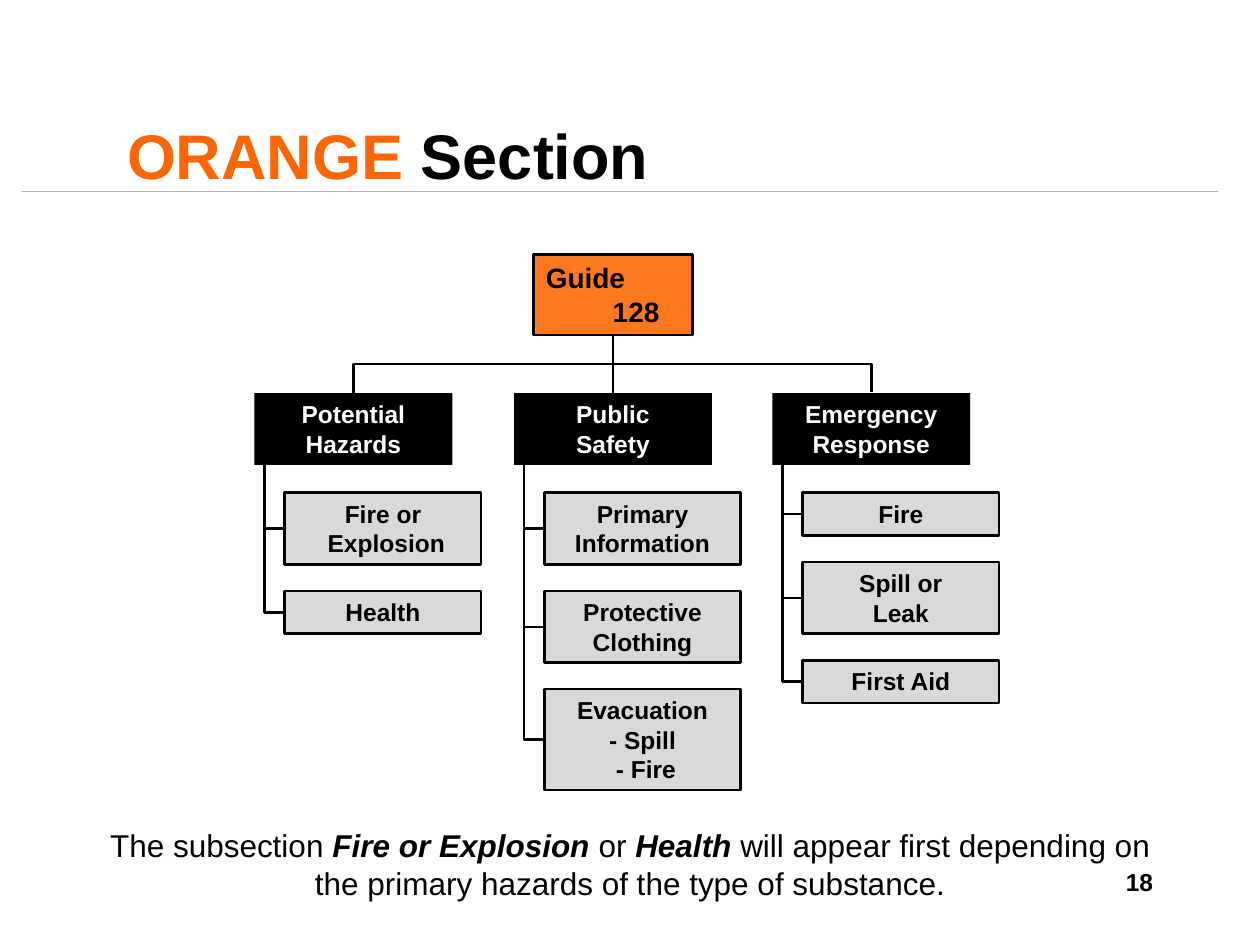
from lxml import etree
from pptx import Presentation
from pptx.dml.color import RGBColor
from pptx.enum.shapes import MSO_CONNECTOR, MSO_SHAPE
from pptx.enum.text import MSO_ANCHOR, PP_ALIGN
from pptx.oxml.ns import qn
from pptx.util import Inches, Pt

RECT = MSO_SHAPE.RECTANGLE
STRAIGHT, ELBOW = MSO_CONNECTOR.STRAIGHT, MSO_CONNECTOR.ELBOW
LEFT, CENTER, RIGHT = PP_ALIGN.LEFT, PP_ALIGN.CENTER, PP_ALIGN.RIGHT
TOP, MIDDLE = MSO_ANCHOR.TOP, MSO_ANCHOR.MIDDLE
TOP_SIDE, BOTTOM_SIDE = 0, 2

SLIDE_W, SLIDE_H = Inches(10), Inches(7.5)
COLUMN, ROW = SLIDE_W / 10, SLIDE_H / 7.5
COLORS = {"black": "000000", "white": "FFFFFF", "orange": "FF6600",
          "guide": "FF781D", "topic": "D9D9D9", "rule": "B2B2B2"}

SECTIONS = [
    (0, "Potential Hazards", [("Fire or\n Explosion", 2), ("Health", 1)]),
    (2.06, "Public\nSafety", [("Primary Information", 2), ("Protective Clothing", 2),
                              ("Evacuation\n- Spill\n - Fire", 3)]),
    (4.11, "Emergency Response", [("Fire", 1), ("Spill or\nLeak", 2), ("First Aid", 1)]),
]


def color(name):
    """Return the named colour."""
    return RGBColor.from_string(COLORS[name])


def grid(*cells):
    """Turn alternating column and row counts into slide lengths."""
    return [round(n * (ROW if i % 2 else COLUMN)) for i, n in enumerate(cells)]


def style(paragraph, size, ink="black", bold=True, align=LEFT):
    """Set the alignment and font of a paragraph."""
    paragraph.alignment = align
    font = paragraph.font
    font.name, font.size, font.bold = "Arial", Pt(size), bold
    font.color.rgb = color(ink)


def add_tab_stop(paragraph, columns):
    """Give a paragraph a left tab stop."""
    stops = etree.Element(qn("a:tabLst"))
    etree.SubElement(stops, qn("a:tab"), pos=str(round(columns * COLUMN)), algn="l")
    paragraph._p.get_or_add_pPr().insert(0, stops)


def add_line(slide, start, end, ink="black", width=1.5, kind=STRAIGHT):
    """Draw a connector between two grid points."""
    line = slide.shapes.add_connector(kind, *grid(*start, *end))
    line.line.color.rgb, line.line.width = color(ink), Pt(width)
    etree.SubElement(line._element.spPr, qn("a:effectLst"))
    return line


def add_turned_elbow(slide, start, end, preset, turn, adjust=None):
    """Draw an elbow that leaves its start point vertically."""
    (x1, y1), (x2, y2) = start, end
    mid_x, mid_y = (x1 + x2) / 2, (y1 + y2) / 2
    half_w, half_h = abs(y2 - y1) / 2, abs(x2 - x1) / 2
    elbow = add_line(slide, (mid_x - half_w, mid_y - half_h),
                     (mid_x + half_w, mid_y + half_h), kind=ELBOW)
    properties = elbow._element.spPr
    for key, value in turn.items():
        properties.find(qn("a:xfrm")).set(key, value)
    shape = properties.find(qn("a:prstGeom"))
    shape.set("prst", preset)
    if adjust is not None:
        guides = shape.find(qn("a:avLst"))
        etree.SubElement(guides, qn("a:gd"), name="adj1",
                         fmla=f"val {round(adjust * 100000)}")


def add_branch(slide, start, end):
    """Draw a branch that runs down and then right."""
    add_turned_elbow(slide, start, end, "bentConnector2",
                     {"rot": "16200000", "flipH": "1"})


def add_bracket(slide, left_x, right_x, y, rise):
    """Draw a bracket that joins two headers from above."""
    depth = 0.01
    add_turned_elbow(slide, (left_x, y + depth / 2), (right_x, y - depth / 2),
                     "bentConnector3", {"rot": "5400000", "flipH": "1", "flipV": "1"},
                     rise / depth)


def add_text_frame(slide, box, anchor=TOP):
    """Add a wrapping text box and return its text frame."""
    frame = slide.shapes.add_textbox(*grid(*box)).text_frame
    frame.word_wrap, frame.vertical_anchor = True, anchor
    return frame


def add_node(slide, box, text, fill, size=14, ink="black", outlined=True, align=CENTER):
    """Add one labelled rectangle of the chart."""
    node = slide.shapes.add_shape(RECT, *grid(*box))
    node.shadow.inherit = False
    node.fill.solid()
    node.fill.fore_color.rgb = color(fill)
    if outlined:
        node.line.color.rgb, node.line.width = color("black"), Pt(1.5)
    else:
        node.line.fill.background()
    frame = node.text_frame
    frame.word_wrap, frame.vertical_anchor = True, TOP
    frame.text = text
    for paragraph in frame.paragraphs:
        style(paragraph, size, ink, align=align)
    return node


def node_height(lines):
    """Return the rows needed by a node with this many text lines."""
    return 0.34 + 0.23 * (lines - 1)


def add_title(slide, box):
    """Write the two-colour title and the rule below it."""
    x, y, w, h = box
    rule_y = y + 0.92
    add_line(slide, (x + 0.05, rule_y), (x + 9.55, rule_y), "rule", 0.75)
    title = add_text_frame(slide, box, MIDDLE).paragraphs[0]
    add_tab_stop(title, 0.79)
    style(title, 36)
    title.add_run().text = "\t"
    accent = title.add_run()
    accent.text = "ORANGE"
    accent.font.color.rgb = color("orange")
    title.add_run().text = " Section"


def add_section(slide, box, heading, topics):
    """Place a section header with its topics hanging from a trunk."""
    x, y, w, h = box
    header = add_node(slide, box, heading, "black", ink="white", outlined=False)
    trunk_x, topic_x = x + 0.08, x + 0.24
    topic_y, gap = y + h + 0.22, 0.21
    for text, lines in topics:
        height = node_height(lines)
        add_node(slide, (topic_x, topic_y, w - 0.01, height), text, "topic")
        add_branch(slide, (trunk_x, y + h), (topic_x, topic_y + height / 2))
        topic_y += height + gap
    return header


def add_chart_tree(slide, box):
    """Place the guide node and its sections, joined by a bracket."""
    x, y, w, h = box
    header_w, guide_w, guide_h = 1.57, 1.26, 0.64
    middle, header_y = x + w / 2, y + 1.1
    guide = add_node(slide, (middle - guide_w / 2, y, guide_w, guide_h),
                     "Guide\n\t128", "guide", size=16, align=LEFT)
    add_tab_stop(guide.text_frame.paragraphs[1], 0.53)
    headers = [add_section(slide, (x + offset, header_y, header_w, node_height(2)),
                           heading, topics)
               for offset, heading, topics in SECTIONS]
    stem = add_line(slide, (middle, y + guide_h), (middle, header_y))
    stem.begin_connect(guide, BOTTOM_SIDE)
    stem.end_connect(headers[1], TOP_SIDE)
    left_x, right_x = (x + SECTIONS[i][0] + header_w / 2 for i in (0, -1))
    add_bracket(slide, left_x, right_x, header_y, 0.24)


def add_caption(slide, box):
    """Write the explanatory sentence with its emphasised names."""
    caption = add_text_frame(slide, box).paragraphs[0]
    style(caption, 18, bold=False, align=CENTER)
    parts = ["The subsection ", "Fire or Explosion ", "or ", "Health ",
             "will appear first depending on the primary hazards of the type of substance."]
    for i, part in enumerate(parts):
        run = caption.add_run()
        run.text = part
        if i % 2:
            run.font.bold = run.font.italic = True


def add_page_number(slide, box):
    """Write the page number."""
    number = add_text_frame(slide, box).paragraphs[0]
    number.text = "18"
    style(number, 14, align=RIGHT)


def main():
    """Build and save the slide."""
    deck = Presentation()
    deck.slide_width, deck.slide_height = SLIDE_W, SLIDE_H
    slide = deck.slides.add_slide(deck.slide_layouts[6])
    add_caption(slide, (0.74, 6.51, 8.52, 0.71))
    add_chart_tree(slide, (2.02, 2.02, 5.69, 4.25))
    add_title(slide, (0.12, 0.6, 8.5, 1.25))
    add_page_number(slide, (7.17, 6.83, 2.08, 0.5))
    deck.save("out.pptx")


if __name__ == "__main__":
    main()
